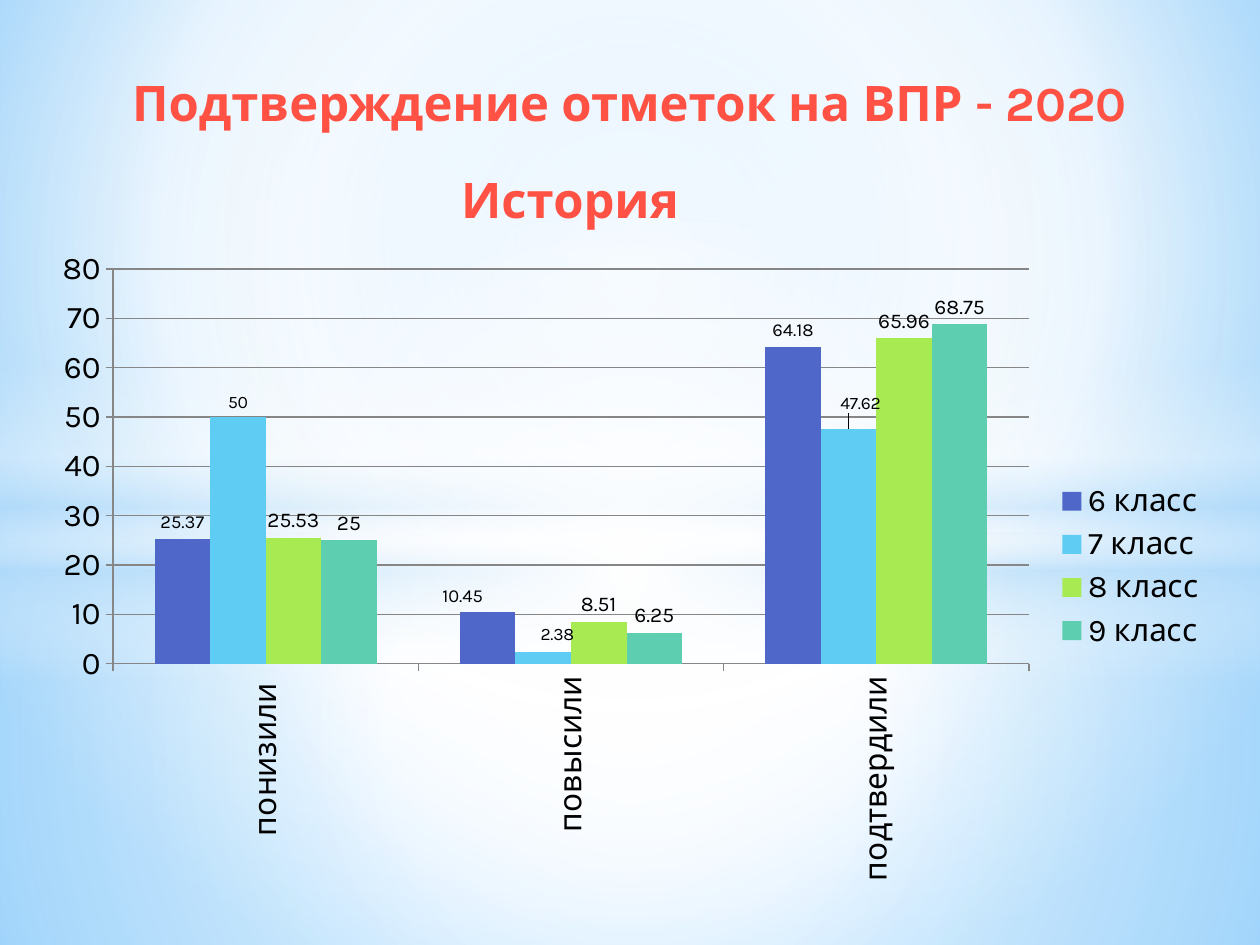
import pptx
import pptx.chart.data
import pptx.dml.color
import pptx.enum.chart
import pptx.enum.shapes
import pptx.enum.text
import pptx.oxml
import pptx.oxml.ns
import pptx.util
from dataclasses import dataclass

NAMESPACES = pptx.oxml.ns.nsdecls("a", "c")


@dataclass(frozen=True)
class Theme:
    font: str = "Karla"
    title_size: int = 28
    chart_size: int = 18
    text: str = "000000"
    grid: str = "868686"
    accent: str = "FF5244"
    title_stops: tuple = ((0, "8A1300", 100), (78, "FF5244", 100), (100, "FFF0F0", 100))
    page_stops: tuple = ((0, "9ED5FF", 100), (60, "FFFFFF", 100), (100, "5BB9FF", 100))


THEME = Theme()
CENTER = (50, 50, 50, 50)


def px(length):
    return pptx.util.Emu(round(length * 914400 / 126))


def rgb(value):
    return pptx.dml.color.RGBColor.from_string(value)


def set_gradient(element, stops, focus=None, angle=90):
    """Replace the solid fill inside element; focus makes the gradient circular."""
    marks = "".join(
        f'<a:gs pos="{position * 1000}"><a:srgbClr val="{color}">'
        f'<a:alpha val="{opacity * 1000}"/></a:srgbClr></a:gs>'
        for position, color, opacity in stops)
    if focus:
        sides = " ".join(f'{side}="{share * 1000}"' for side, share in zip("ltrb", focus))
        course = f'<a:path path="circle"><a:fillToRect {sides}/></a:path>'
    else:
        course = f'<a:lin ang="{angle * 60000}" scaled="0"/>'
    gradient = pptx.oxml.parse_xml(
        f'<a:gradFill {NAMESPACES} rotWithShape="1"><a:gsLst>{marks}</a:gsLst>{course}</a:gradFill>')
    solid = element.xpath(".//a:solidFill")[0]
    solid.getparent().replace(solid, gradient)


def add_backdrop(page, width, height):
    page.background.fill.solid()
    set_gradient(page.element.xpath(".//p:bg")[0], THEME.page_stops, (20, 10, 20, 60))
    rectangle = pptx.enum.shapes.MSO_SHAPE.RECTANGLE
    oval = pptx.enum.shapes.MSO_SHAPE.OVAL
    horizon = 533
    layers = (
        # Lower and upper halves
        (rectangle, horizon, height - horizon,
         ((0, "FFFFFF", 91), (37, "FFFFFF", 76), (100, "B4DCFA", 79)), CENTER),
        (rectangle, 0, horizon,
         ((0, "FFFFFF", 89), (48, "FFFFFF", 62), (100, "B4DCFA", 79)), CENTER),
        # Horizon band
        (rectangle, 365, 315,
         ((0, "FFFFFF", 0), (29, "FFFFFF", 30), (45, "B4DCFA", 40),
          (55, "FFFFFF", 26), (65, "B4DCFA", 60), (100, "FFFFFF", 0)), None),
        # Central glow
        (oval, 220, 703, ((0, "FFFFFF", 100), (54, "FFFFFF", 0)), CENTER),
    )
    for kind, top, depth, stops, focus in layers:
        layer = page.shapes.add_shape(kind, 0, px(top), px(width), px(depth))
        layer.shadow.inherit = False
        layer.line.fill.background()
        layer.fill.solid()
        set_gradient(layer.element.spPr, stops, focus)


def add_heading(page, left, top, width, height, wording):
    box = page.shapes.add_textbox(px(left), px(top), px(width), px(height))
    frame = box.text_frame
    frame.word_wrap = True
    frame.auto_size = pptx.enum.text.MSO_AUTO_SIZE.SHAPE_TO_FIT_TEXT
    frame.text = wording
    para = frame.paragraphs[0]
    para.alignment = pptx.enum.text.PP_ALIGN.CENTER
    span = para.runs[0]
    span.font.name = THEME.font
    span.font.size = pptx.util.Pt(THEME.title_size)
    span.font.bold = True
    span.font.color.rgb = rgb(THEME.accent)
    set_gradient(para._p, THEME.title_stops)


def manual_layout(**values):
    parts = "".join(f'<c:{name} val="{value}"/>' for name, value in values.items())
    return pptx.oxml.parse_xml(
        f"<c:layout {NAMESPACES}><c:manualLayout>{parts}</c:manualLayout></c:layout>")


def style_font(font, size):
    font.name = THEME.font
    font.size = pptx.util.Pt(size)
    font.color.rgb = rgb(THEME.text)


def add_marks_chart(page, left, top, width, height):
    # Name, values, colour, label size, label shifts by point in px
    classes = (
        ("6 класс", (25.37, 10.45, 64.18), "4E67C8", 10.5, {1: (-25, 0)}),
        ("7 класс", (50, 2.38, 47.62), "5ECCF3", 10, {1: (14, -3), 2: (12, -10)}),
        ("8 класс", (25.53, 8.51, 65.96), "A7EA52", 12, {}),
        ("9 класс", (25, 6.25, 68.75), "5DCEAF", 12, {}),
    )
    data = pptx.chart.data.CategoryChartData()
    data.categories = ("понизили ", "повысили", "подтвердили")
    for name, values, *_ in classes:
        data.add_series(name, values)
    chart = page.shapes.add_chart(
        pptx.enum.chart.XL_CHART_TYPE.COLUMN_CLUSTERED,
        px(left), px(top), px(width), px(height), data).chart
    chart.has_title = False
    style_font(chart.font, THEME.chart_size)

    # Legend and plot area
    chart.has_legend = True
    chart.legend.position = pptx.enum.chart.XL_LEGEND_POSITION.RIGHT
    chart.legend.include_in_layout = False
    area = chart.element.xpath(".//c:plotArea")[0]
    for old in area.xpath("./c:layout"):
        area.remove(old)
    area.insert(0, manual_layout(
        layoutTarget="inner", xMode="edge", yMode="edge",
        x=round(74 / width, 4), y=round(31 / height, 4),
        w=round(916 / width, 4), h=round(395 / height, 4)))

    # Axes
    value_axis = chart.value_axis
    value_axis.minimum_scale, value_axis.maximum_scale = 0, 80
    value_axis.major_unit = 10
    value_axis.has_major_gridlines = True
    for axis in (value_axis, chart.category_axis):
        axis.major_tick_mark = pptx.enum.chart.XL_TICK_MARK.OUTSIDE
        style_font(axis.tick_labels.font, THEME.chart_size)
    for item in (value_axis, chart.category_axis, value_axis.major_gridlines):
        item.format.line.color.rgb = rgb(THEME.grid)
        item.format.line.width = pptx.util.Pt(0.75)
    area.xpath("./c:catAx/c:txPr/a:bodyPr")[0].set("rot", "-5400000")

    # Columns and their labels
    plot = chart.plots[0]
    plot.vary_by_categories = False
    plot.gap_width = 150
    plot.overlap = 0
    outside = pptx.enum.chart.XL_LABEL_POSITION.OUTSIDE_END
    for series, (_, _, color, size, shifts) in zip(plot.series, classes):
        series.format.fill.solid()
        series.format.fill.fore_color.rgb = rgb(color)
        labels = series.data_labels
        labels.show_value = True
        labels.position = outside
        style_font(labels.font, size)
        for index, (right, down) in shifts.items():
            label = series.points[index].data_label
            label.position = outside
            style_font(label.font, size)
            node = series._element.xpath(f"./c:dLbls/c:dLbl[c:idx/@val={index}]")[0]
            node.insert(1, manual_layout(x=round(right / width, 4), y=round(down / height, 4)))


def main():
    width, height = 1260, 945
    deck = pptx.Presentation()
    deck.slide_width, deck.slide_height = px(width), px(height)
    page = deck.slides.add_slide(deck.slide_layouts[6])
    add_backdrop(page, width, height)
    add_heading(page, 84, 66, 1091, 72, "Подтверждение отметок на ВПР - 2020")
    add_marks_chart(page, 39, 238, 1181, 656)
    add_heading(page, 223, 163, 694, 72, "История")
    deck.save("out.pptx")


if __name__ == "__main__":
    main()
